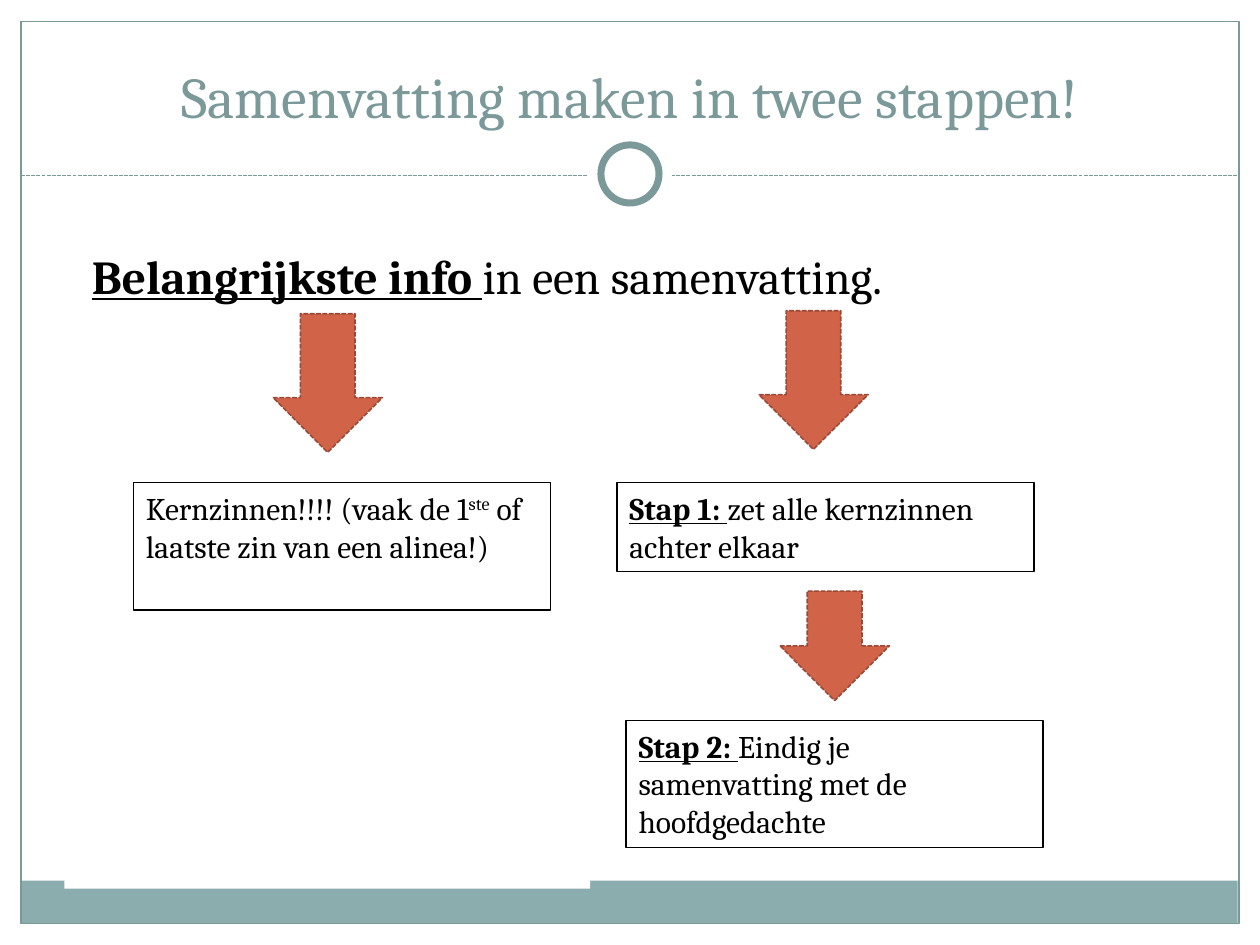
import pptx
import pptx.util
import pptx.dml.color
import pptx.enum.dml
import pptx.enum.shapes
import pptx.enum.text
import pptx.oxml

Pt = pptx.util.Pt
RGB = pptx.dml.color.RGBColor
KIND = pptx.enum.shapes.MSO_SHAPE
DASH = pptx.enum.dml.MSO_LINE.SQUARE_DOT
ANCHOR = pptx.enum.text.MSO_ANCHOR
ALIGN = pptx.enum.text.PP_ALIGN

WHITE = RGB(0xFF, 0xFF, 0xFF)
BLACK = RGB(0, 0, 0)
TEAL = RGB(0x7C, 0x99, 0x9A)
BAND = RGB(0x8C, 0xAD, 0xAE)
RUST = RGB(0xD1, 0x63, 0x49)
BROWN = RGB(0x9B, 0x49, 0x36)
FONT = "Cambria"


def add_shape(slide, kind, area, fill=None, line=None, width=0.75):
    shape = slide.shapes.add_shape(kind, *map(Pt, area))
    shape.shadow.inherit = False
    if fill is None:
        shape.fill.background()
    else:
        shape.fill.solid()
        shape.fill.fore_color.rgb = fill
    if line is None:
        shape.line.fill.background()
    else:
        shape.line.color.rgb = line
        shape.line.width = Pt(width)
    return shape


def add_rule(slide, left, right, y):
    rule = slide.shapes.add_connector(
        pptx.enum.shapes.MSO_CONNECTOR.STRAIGHT, Pt(left), Pt(y), Pt(right), Pt(y))
    rule.line.color.rgb = TEAL
    rule.line.width = Pt(0.75)
    rule.line.dash_style = DASH
    rule._element.spPr.append(pptx.oxml.parse_xml(
        '<a:effectLst xmlns:a="http://schemas.openxmlformats.org/drawingml/2006/main"/>'))


def add_arrow(slide, left, top, height):
    arrow = add_shape(slide, KIND.DOWN_ARROW, (left, top, 62.5, height), RUST, BROWN, 0.9)
    arrow.line.dash_style = DASH


def add_text(slide, area, parts, size, color=BLACK):
    """Each part is a text and its style: "key", "super" or "" for plain."""
    box = slide.shapes.add_textbox(*map(Pt, area))
    box.text_frame.word_wrap = True
    para = box.text_frame.paragraphs[0]
    for text, style in parts:
        run = para.add_run()
        run.text = text
        run.font.name = FONT
        run.font.size = Pt(size)
        run.font.color.rgb = color
        if style == "key":
            run.font.bold = True
            run.font.underline = True
        elif style == "super":
            run._r.get_or_add_rPr().set("baseline", "30000")
    return box


def add_box(slide, left, top, height, parts):
    box = add_text(slide, (left, top, 238.3, height), parts, 18)
    box.line.color.rgb = BLACK
    box.line.width = Pt(0.75)


def add_frame(slide):
    add_shape(slide, KIND.RECTANGLE, (11.75, 503.2, 695.5, 24.5), BAND)
    add_shape(slide, KIND.RECTANGLE, (12, 12.2, 696, 515.5), line=TEAL)
    add_rule(slide, 12, 708, 100.5)
    # Ring on the divider
    add_shape(slide, KIND.OVAL, (336, 75.4, 48, 48), WHITE)
    add_shape(slide, KIND.OVAL, (343.4, 82.8, 33.2, 33.2), WHITE, TEAL, 4)
    # White panel over part of the band
    add_shape(slide, KIND.RECTANGLE, (36.8, 394.6, 300.4, 113.2), WHITE)


def main():
    deck = pptx.Presentation()
    deck.slide_width, deck.slide_height = Pt(720), Pt(540)
    slide = deck.slides.add_slide(deck.slide_layouts[6])
    add_frame(slide)

    # Title and lead sentence
    title = add_text(slide, (24, 18, 672, 60),
                     [("Samenvatting maken in twee stappen!", "")], 33, TEAL)
    title.text_frame.vertical_anchor = ANCHOR.BOTTOM
    title.text_frame.paragraphs[0].alignment = ALIGN.CENTER
    add_text(slide, (45.4, 137.5, 620.6, 346.3),
             [("Belangrijkste info ", "key"), ("in een samenvatting.", "")], 27)

    # Key sentences
    add_arrow(slide, 156, 179.3, 79.2)
    add_box(slide, 76.3, 275.8, 72.7,
            [("Kernzinnen!!!! (vaak de 1", ""), ("ste", "super"),
             (" of laatste zin van een alinea!)", "")])

    # The two steps
    add_arrow(slide, 433.6, 177.6, 79.2)
    add_box(slide, 352.6, 275.8, 50.9,
            [("Stap 1: ", "key"), ("zet alle kernzinnen achter elkaar", "")])
    add_arrow(slide, 445.7, 337.8, 62.5)
    add_box(slide, 357.8, 411.7, 72.7,
            [("Stap 2: ", "key"),
             ("Eindig je samenvatting met de hoofdgedachte", "")])

    deck.save("out.pptx")


if __name__ == "__main__":
    main()
